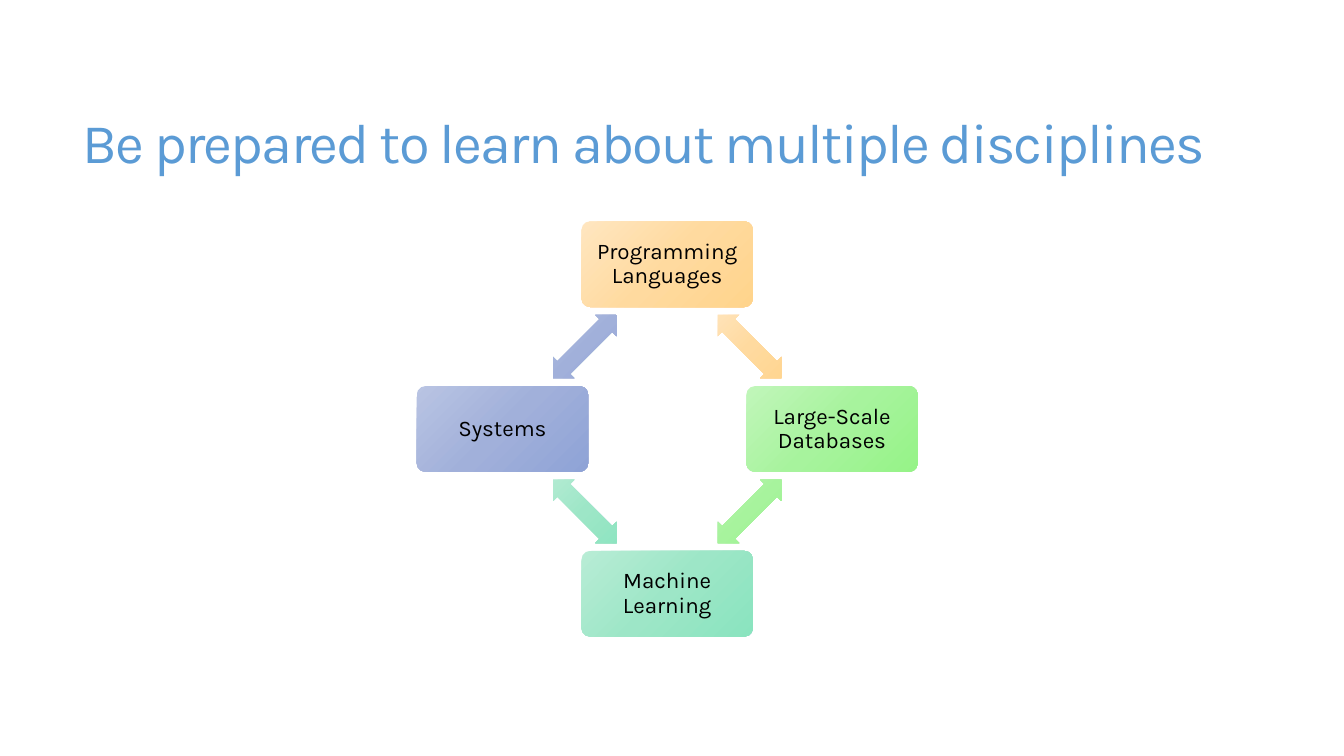
from copy import deepcopy

from pptx import Presentation
from pptx.dml.color import RGBColor
from pptx.enum.shapes import MSO_SHAPE
from pptx.enum.text import MSO_ANCHOR, MSO_AUTO_SIZE, PP_ALIGN
from pptx.oxml.ns import qn
from pptx.util import Pt

ROUNDED = MSO_SHAPE.ROUNDED_RECTANGLE
DOUBLE_ARROW = MSO_SHAPE.LEFT_RIGHT_ARROW
MIDDLE = MSO_ANCHOR.MIDDLE
NO_AUTOFIT = MSO_AUTO_SIZE.NONE
LEFT, CENTER = PP_ALIGN.LEFT, PP_ALIGN.CENTER

TITLE = "Be prepared to learn about multiple disciplines"
CENTER_X, CENTER_Y, RADIUS = 476.6, 306.4, 117.7
DISCIPLINES = [
    ("Programming Languages", (0, -1), ("FFE6C0", "FFDA9F", "FFD48C")),
    ("Large-Scale Databases", (1, 0), ("C1F6BA", "A7F39D", "96F388")),
    ("Machine Learning", (0, 1), ("B8ECD5", "9DE6C7", "8AE4BF")),
    ("Systems", (-1, 0), ("B9C4E3", "A1B0DA", "8FA3D6")),
]


def colour(value):
    return RGBColor.from_string(value)


def apply(target, values):
    for name, value in values.items():
        setattr(target, name, value)


class SlideBuilder:
    font = "Karla"
    title_colour = "5B9BD5"
    text_colour = "000000"
    box_size = (122.4, 61.2)
    arrow_size = (64.1, 21.5)

    def __init__(self, presentation):
        self.slide = presentation.slides.add_slide(presentation.slide_layouts[5])

    def set_text(self, shape, text, size, text_colour, alignment, spacing, inset):
        frame = shape.text_frame
        frame.text = text
        apply(frame, {"word_wrap": True, "auto_size": NO_AUTOFIT,
                      "vertical_anchor": MIDDLE,
                      "margin_left": Pt(inset[0]), "margin_right": Pt(inset[0]),
                      "margin_top": Pt(inset[1]), "margin_bottom": Pt(inset[1])})
        paragraph = frame.paragraphs[0]
        apply(paragraph, {"alignment": alignment, "line_spacing": spacing})
        run = paragraph.runs[0]
        apply(run.font, {"name": self.font, "size": Pt(size), "bold": False})
        run.font.color.rgb = colour(text_colour)
        return run

    def title(self, text):
        shape = self.slide.shapes.title
        apply(shape, {"left": Pt(51.8), "top": Pt(39.6),
                      "width": Pt(848.2), "height": Pt(130.3)})
        run = self.set_text(shape, text, 40, self.title_colour, LEFT, 0.85, (7.2, 3.6))
        run._r.get_or_add_rPr().set("spc", "-120")

    def shape(self, kind, x, y, size, adjustments, colours):
        width, height = size
        shape = self.slide.shapes.add_shape(
            kind, Pt(x - width / 2), Pt(y - height / 2), Pt(width), Pt(height))
        for index, value in enumerate(adjustments):
            shape.adjustments[index] = value
        shape.shadow.inherit = False
        shape.line.fill.background()
        self.gradient(shape, colours)
        return shape

    def gradient(self, shape, colours):
        shape.fill.gradient()
        shape.fill.gradient_angle = 315
        gradient = shape._element.spPr.find(qn("a:gradFill"))
        gradient.set("rotWithShape", "0")
        gradient.find(qn("a:lin")).set("scaled", "0")
        stops = gradient.find(qn("a:gsLst"))
        stops.append(deepcopy(stops[0]))
        for index, stop in enumerate(shape.fill.gradient_stops):
            stop.position = index / 2
            stop.color.rgb = colour(colours[index])

    def box(self, text, x, y, colours):
        shape = self.shape(ROUNDED, x, y, self.box_size, [0.1], colours)
        self.set_text(shape, text, 16, self.text_colour, CENTER, 0.9, (5, 5))

    def arrow(self, x, y, rotation, colours):
        shape = self.shape(DOUBLE_ARROW, x, y, self.arrow_size, [0.6, 0.5], colours)
        shape.rotation = rotation


def main():
    presentation = Presentation()
    apply(presentation, {"slide_width": Pt(960), "slide_height": Pt(540)})
    builder = SlideBuilder(presentation)
    builder.title(TITLE)
    for index, (name, (across, down), colours) in enumerate(DISCIPLINES):
        next_across, next_down = DISCIPLINES[(index + 1) % len(DISCIPLINES)][1]
        builder.box(name, CENTER_X + RADIUS * across, CENTER_Y + RADIUS * down, colours)
        builder.arrow(CENTER_X + RADIUS * (across + next_across) / 2,
                      CENTER_Y + RADIUS * (down + next_down) / 2,
                      45 + 90 * index, colours)
    presentation.save("out.pptx")


if __name__ == "__main__":
    main()
